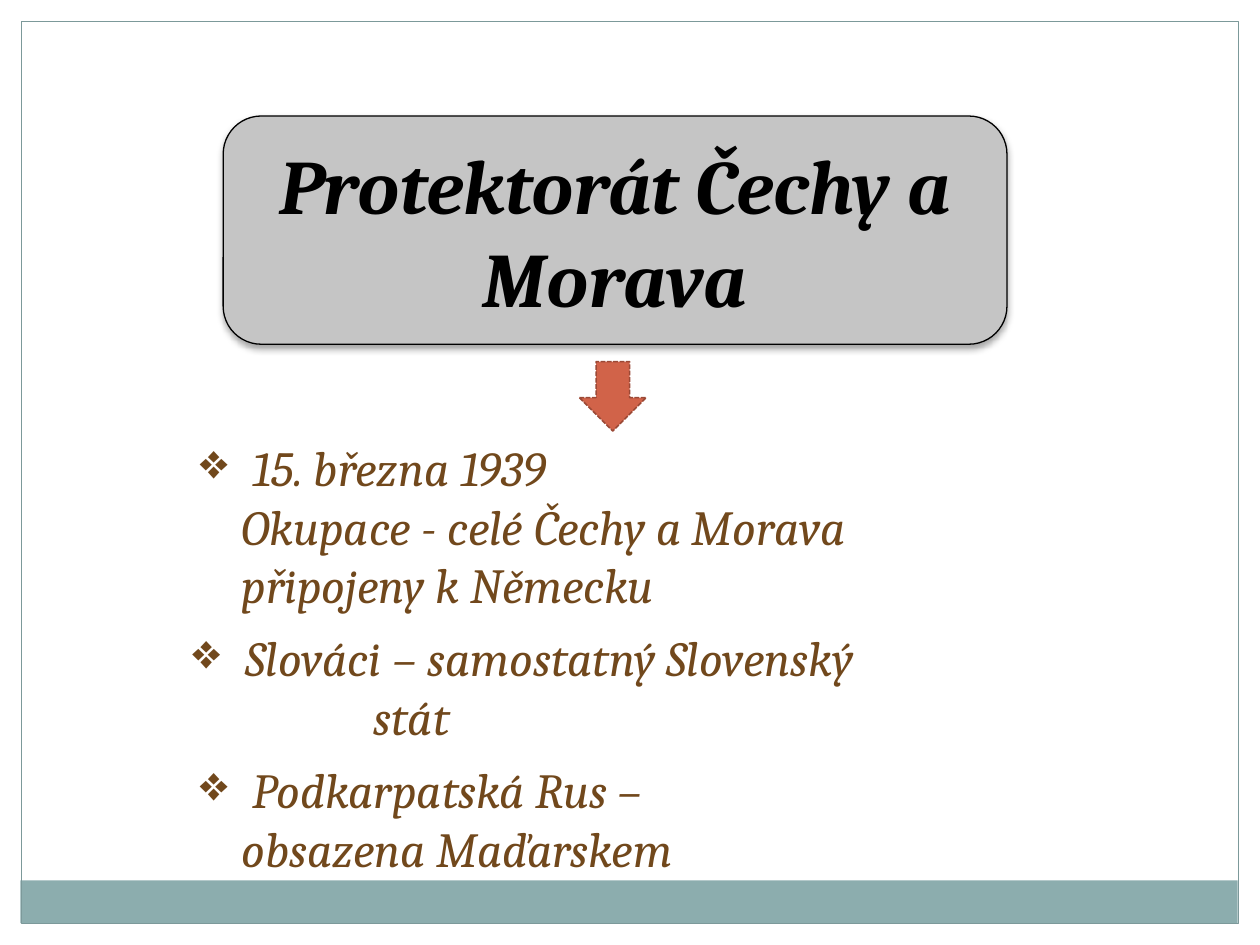
from dataclasses import dataclass

from lxml import etree
from pptx import Presentation
from pptx import util as u
from pptx.dml.color import RGBColor
from pptx.enum import dml, shapes, text
from pptx.oxml import ns


@dataclass(frozen=True)
class Theme:
    font: str = "Cambria"
    title_size: int = 44
    body_size: int = 28
    black: str = "000000"
    body: str = "71481C"
    panel: str = "C5C5C5"
    band: str = "8CADAE"
    frame: str = "7C999A"
    arrow: str = "D16349"
    arrow_line: str = "9B4936"


theme = Theme()


def add_panel(page, kind, place, fill, line, weight):
    shape = page.shapes.add_shape(kind, *map(u.Cm, place))
    shape.shadow.inherit = False
    if fill:
        shape.fill.solid()
        shape.fill.fore_color.rgb = RGBColor.from_string(fill)
    else:
        shape.fill.background()
    if line:
        shape.line.color.rgb = RGBColor.from_string(line)
        shape.line.width = u.Pt(weight)
    else:
        shape.line.fill.background()
    return shape


def write(para, words, size, color, bold):
    span = para.add_run()
    span.text = words
    formats = {"name": theme.font, "size": u.Pt(size), "bold": bold, "italic": True}
    for key, value in formats.items():
        setattr(span.font, key, value)
    span.font.color.rgb = RGBColor.from_string(color)


deck = Presentation()
deck.slide_width, deck.slide_height = u.Cm(25.4), u.Cm(19.05)
page = deck.slides.add_slide(deck.slide_layouts.get_by_name("Title Only"))
kinds = shapes.MSO_SHAPE

add_panel(page, kinds.RECTANGLE, (0.41, 17.75, 24.54, 0.86), theme.band, None, 0)
add_panel(page, kinds.RECTANGLE, (0.43, 0.43, 24.54, 18.19), None, theme.frame, 0.75)

title_place = (4.5, 2.34, 15.8, 4.6)
panel = add_panel(page, kinds.ROUNDED_RECTANGLE, title_place, theme.panel, theme.black, 0.75)
effects = panel._element.spPr.find(ns.qn("a:effectLst"))
shadow = etree.SubElement(effects, ns.qn("a:outerShdw"), blurRad=str(u.Pt(4)),
                          dist=str(u.Pt(2)), dir="5400000", rotWithShape="0")
shade = etree.SubElement(shadow, ns.qn("a:srgbClr"), val=theme.black)
etree.SubElement(shade, ns.qn("a:alpha"), val="35000")

title = page.shapes.title
panel._element.addnext(title._element)
for key, value in zip(("left", "top", "width", "height"), title_place):
    setattr(title, key, u.Cm(value))
title.text_frame.word_wrap = True
title.text_frame.auto_size = text.MSO_AUTO_SIZE.NONE
title.text_frame.vertical_anchor = text.MSO_ANCHOR.MIDDLE
heading = title.text_frame.paragraphs[0]
heading.alignment = text.PP_ALIGN.CENTER
write(heading, "Protektorát Čechy a Morava", theme.title_size, theme.black, True)

arrow = add_panel(page, kinds.DOWN_ARROW, (11.68, 7.29, 1.35, 1.4),
                  theme.arrow, theme.arrow_line, 0.9)
arrow.line.dash_style = dml.MSO_LINE.SQUARE_DOT

bullet_indent = u.Cm(1.07)
items = [
    ((3.78, 8.69, 18.08, 3.84), 0.84,
     ["15. března 1939", "Okupace - celé Čechy a Morava", "připojeny k Německu"]),
    ((3.63, 12.53, 18.39, 2.64), 3.66,
     ["Slováci – samostatný Slovenský", "stát"]),
    ((3.78, 15.19, 13.11, 2.64), 0.84,
     ["Podkarpatská Rus –", "obsazena Maďarskem"]),
]
for place, indent, lines in items:
    box = page.shapes.add_textbox(*map(u.Cm, place))
    frame = box.text_frame
    frame.word_wrap = True
    for index, words in enumerate(lines):
        para = frame.add_paragraph() if index else frame.paragraphs[0]
        props = para._p.get_or_add_pPr()
        if index:
            props.set("marL", str(u.Cm(indent)))
        else:
            props.set("marL", str(bullet_indent))
            props.set("indent", str(-bullet_indent))
            etree.SubElement(props, ns.qn("a:buChar"), char="❖")
        write(para, words, theme.body_size, theme.body, False)

deck.save("out.pptx")
